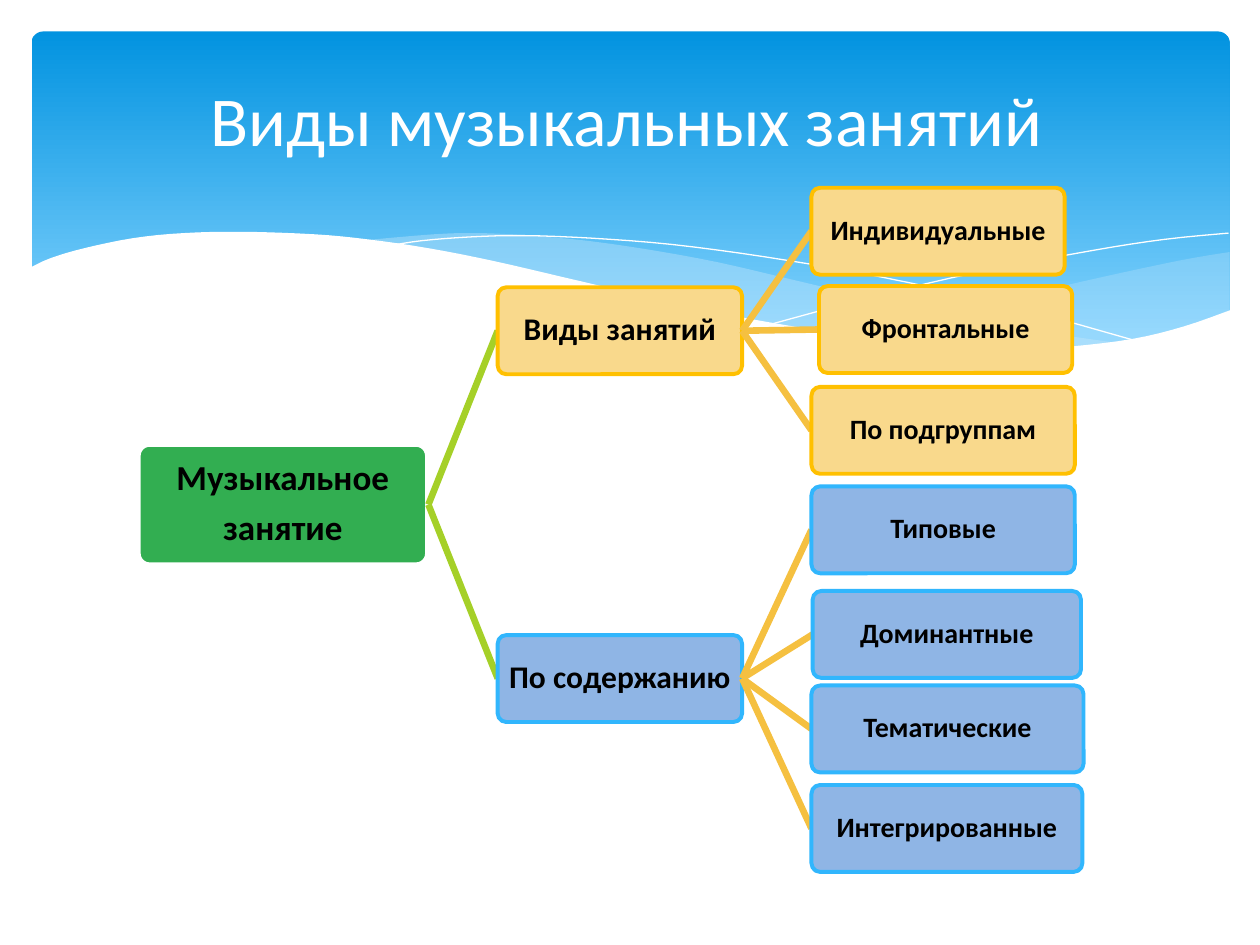
from pptx import Presentation
from pptx.util import Inches, Pt
from pptx.dml.color import RGBColor
from pptx.enum.shapes import MSO_SHAPE as Shape, MSO_CONNECTOR as Link
from pptx.enum.text import PP_ALIGN as Align, MSO_ANCHOR as Anchor
from pptx.oxml.ns import qn
from lxml.etree import SubElement

THEME = {
    "font": "Calibri", "title": 40, "root": 20, "branch": 18, "leaf": 16,
    "white": "FFFFFF", "ink": "000000", "sky": ("0293E0", "83D3FE"),
    "mist": "C6E7FC", "green": "32AE51", "lime": "A5D028", "gold": "F5C040",
    "kinds": ("F9D98C", "FFC000"), "content": ("8FB5E5", "31B6FD"),
}

TITLE = "Виды музыкальных занятий"
ROOT = ("Музыкальное\nзанятие", (1.09, 3.52, 2.31, 0.97))
# Branch: text, top, colours, leaves; leaf: text, left, top, width
BRANCHES = [
    ("Виды занятий", 2.28, "kinds", [
        ("Индивидуальные", 6.44, 1.49, 2.01),
        ("Фронтальные", 6.5, 2.27, 2.01),
        ("По подгруппам", 6.44, 3.07, 2.09)]),
    ("По содержанию", 5.04, "content", [
        ("Типовые", 6.44, 3.86, 2.09),
        ("Доминантные", 6.45, 4.69, 2.13),
        ("Тематические", 6.44, 5.44, 2.16),
        ("Интегрированные", 6.44, 6.23, 2.15)]),
]
BRANCH_X, BRANCH_W, BOX_H = 3.95, 1.94, 0.69

# Each wave: opacity in percent (None for a bare line), then its smooth edges
WAVES = [
    (29, [[(9.76, 2), (9.35, 2.07), (8.61, 2.23), (7.79, 2.42), (7.06, 2.57), (6.61, 2.65)],
          [(6.61, 2.65), (7.05, 2.71), (7.57, 2.76), (8.03, 2.78), (8.54, 2.76),
           (8.97, 2.7), (9.35, 2.62), (9.76, 2.47)]]),
    (40, [[(8.93, 2.73), (8.37, 2.65), (7.75, 2.54), (7.06, 2.4), (6.29, 2.22), (5.69, 2.08),
           (5.14, 1.98), (4.65, 1.91), (4.2, 1.87), (3.8, 1.85), (3.44, 1.86), (2.86, 1.91)],
          [(2.86, 1.91), (3.42, 1.99), (4.04, 2.11), (4.49, 2.22), (5.3, 2.4), (6.01, 2.55),
           (6.65, 2.66), (7.22, 2.74), (7.73, 2.77), (8.18, 2.78), (8.57, 2.77), (8.93, 2.73)]]),
    (None, [[(3.09, 1.95), (3.35, 1.91), (3.74, 1.88), (4.16, 1.87), (4.69, 1.89),
             (5.33, 1.94), (6.08, 2.04), (6.95, 2.19), (7.95, 2.41), (9.07, 2.72)]]),
    (None, [[(6.13, 2.57), (6.95, 2.35), (7.76, 2.16), (8.66, 1.99), (9.24, 1.9), (9.75, 1.85)]]),
    (100, [[(9.77, 2.46), (9.4, 2.59), (8.99, 2.69), (8.5, 2.75), (8.09, 2.77), (7.61, 2.75),
            (7.08, 2.7), (6.48, 2.62), (5.79, 2.5), (5.03, 2.33), (4.47, 2.2), (3.91, 2.07),
            (3.4, 1.97), (2.92, 1.9), (2.5, 1.86), (1.93, 1.84), (1.46, 1.85), (1.06, 1.89),
            (0.67, 1.97), (0.4, 2.05), (0.23, 2.13)],
           [(0.23, 3.29), (9.77, 3.29)]]),
]


def rgb(code):
    return RGBColor.from_string(code)


def smooth(pts, steps=4):
    """Catmull-Rom points through pts."""
    ends = [pts[0], *pts, pts[-1]]
    out = [pts[0]]
    for a, b, c, d in zip(ends, ends[1:], ends[2:], ends[3:]):
        for i in range(1, steps + 1):
            t = i / steps
            out.append(tuple(
                q + t * (r - p) / 2 + t * t * (p - 2.5 * q + 2 * r - s / 2)
                + t ** 3 * (3 * q - p - 3 * r + s) / 2
                for p, q, r, s in zip(a, b, c, d)))
    return out


def draw_wave(shapes, alpha, edges):
    pts = [(Inches(x), Inches(y)) for edge in edges for x, y in smooth(edge)]
    pen = shapes.build_freeform(*pts[0], scale=1)
    pen.add_line_segments(pts[1:], close=alpha is not None)
    wave = pen.convert_to_shape()
    wave.shadow.inherit = False
    if alpha is None:
        wave.fill.background()
        wave.line.color.rgb = rgb(THEME["white"])
        wave.line.width = 0
        return
    wave.line.fill.background()
    wave.fill.solid()
    wave.fill.fore_color.rgb = rgb(THEME["white" if alpha == 100 else "mist"])
    if alpha < 100:
        tint = next(wave.fill._xPr.iter(qn("a:srgbClr")))
        SubElement(tint, qn("a:alpha")).set("val", str(alpha * 1000))


def style(frame, size, color, bold):
    frame.word_wrap = True
    frame.vertical_anchor = Anchor.MIDDLE
    for par in frame.paragraphs:
        par.alignment = Align.CENTER
        for run in par.runs:
            font = run.font
            font.name, font.size, font.bold = THEME["font"], Pt(size), bold
            font.color.rgb = rgb(color)


def add_panel(shapes, place, round_by):
    panel = shapes.add_shape(Shape.ROUNDED_RECTANGLE, *map(Inches, place))
    panel.adjustments[0] = round_by
    panel.shadow.inherit = False
    return panel


def add_box(shapes, text, place, size, fill, edge, width=2.25):
    box = add_panel(shapes, place, 0.1)
    box.fill.solid()
    box.fill.fore_color.rgb = rgb(fill)
    box.line.color.rgb = rgb(edge)
    box.line.width = Pt(width)
    frame = box.text_frame
    frame.text = text
    frame.margin_left = frame.margin_right = Inches(0.03)
    frame.margin_top = frame.margin_bottom = Inches(0.03)
    style(frame, size, THEME["ink"], True)
    for par in frame.paragraphs:
        par.line_spacing = 0.9
        par.space_after = Pt(round(0.35 * size, 1))


def join(shapes, start, end, color):
    """Line from the right middle of one place to the left middle of another."""
    x, y, w, h = start
    ends = (x + w, y + h / 2, end[0], end[1] + end[3] / 2)
    line = shapes.add_connector(Link.STRAIGHT, *map(Inches, ends))
    line.line.color.rgb = rgb(color)
    line.line.width = Pt(3.78)
    SubElement(line._element.spPr, qn("a:effectLst"))


def draw_sky(shapes):
    sky = add_panel(shapes, (0.25, 0.25, 9.51, 2.7), 0.034)
    sky.line.fill.background()
    sky.fill.gradient()
    sky.fill.gradient_angle = 270
    for stop, pos, code in zip(sky.fill.gradient_stops, (0, 0.9), THEME["sky"]):
        stop.position = pos
        stop.color.rgb = rgb(code)
    for alpha, edges in WAVES:
        draw_wave(shapes, alpha, edges)


def set_title(shapes):
    title = shapes.title
    title.left, title.top, title.width, title.height = map(Inches, (0.47, 0.47, 9, 0.94))
    title.text_frame.text = TITLE
    style(title.text_frame, THEME["title"], THEME["white"], False)
    shapes._spTree.append(title._element)  # in front of the sky


def draw_tree(shapes):
    text, root = ROOT
    add_box(shapes, text, root, THEME["root"], THEME["green"], THEME["white"], 3.78)
    for text, top, tone, leaves in BRANCHES:
        branch = (BRANCH_X, top, BRANCH_W, BOX_H)
        join(shapes, root, branch, THEME["lime"])
        add_box(shapes, text, branch, THEME["branch"], *THEME[tone])
        for name, x, y, w in leaves:
            leaf = (x, y, w, BOX_H)
            join(shapes, branch, leaf, THEME["gold"])
            add_box(shapes, name, leaf, THEME["leaf"], *THEME[tone])


def main():
    deck = Presentation()
    deck.slide_width, deck.slide_height = Inches(10), Inches(7.5)
    shapes = deck.slides.add_slide(deck.slide_layouts[5]).shapes
    draw_sky(shapes)
    set_title(shapes)
    draw_tree(shapes)
    deck.save("out.pptx")


if __name__ == "__main__":
    main()
